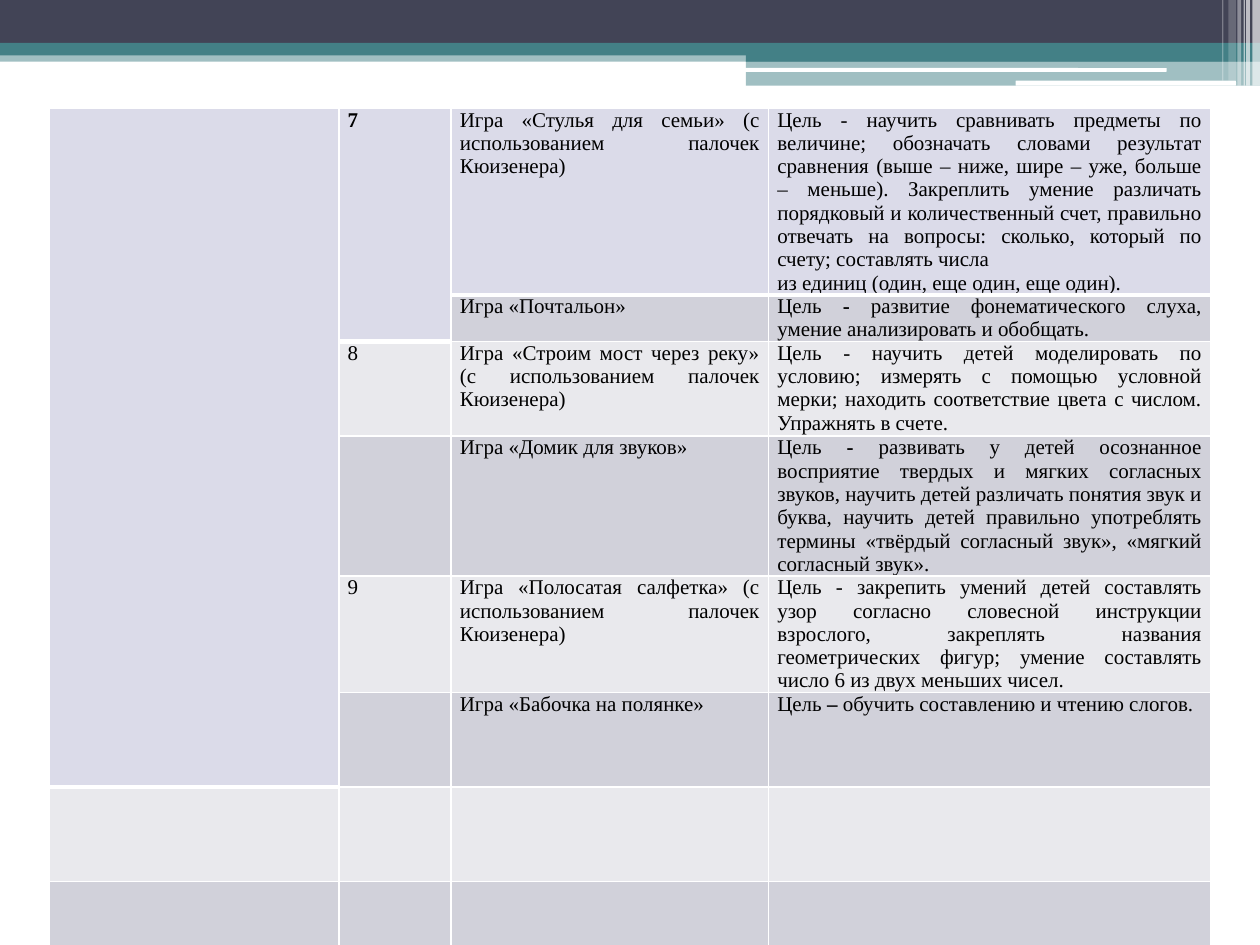
import pptx
import pptx.util
import pptx.dml.color
import pptx.enum.shapes
import pptx.enum.text
import pptx.oxml.ns
import lxml.etree as etree

Inches = pptx.util.Inches
Pt = pptx.util.Pt
qn = pptx.oxml.ns.qn

INK = {"dark": "424456", "teal": "438086", "white": "FFFFFF", "text": "000000",
       "head": "DBDBE9", "light": "E9E9ED", "gray": "D1D1DA"}
FONT = "Times New Roman"

# Header bars: left, top, width, height, colour, opacity in percent
BARS = [
    (0, 0.4, 10, 0.09, "teal", 50),
    (0, 0, 10, 0.34, "dark", 100),
    (0, 0.34, 10, 0.1, "teal", 100),
    (5.92, 0.39, 4.08, 0.1, "teal", 100),
    (5.92, 0.48, 4.08, 0.2, "teal", 50),
]
PILLS = [(5.91, 0.54, 3.35, 0.03), (8.06, 0.64, 1.75, 0.04)]
# Stripes at the right edge: left, width, height, opacity
STRIPES = [
    (9.94, 0.06, 0.68, 65), (9.89, 0.03, 0.68, 65), (9.87, 0.01, 0.68, 60),
    (9.82, 0.03, 0.68, 40), (9.75, 0.06, 0.64, 20), (9.7, 0.01, 0.64, 30),
]

COLS = [2.3, 0.89, 2.52, 3.51]
ROWS = [0.75, 0.03] + [0.75] * 6
# Each row: number, game, goal; a goal is a list of paragraphs,
# and a paragraph is a list of runs that are plain and bold in turn
GAMES = [
    ("7", "Игра «Стулья для семьи» (с использованием палочек Кюизенера)",
     [["Цель - научить сравнивать предметы по величине; обозначать словами "
       "результат сравнения (выше – ниже, шире – уже, больше – меньше). "
       "Закреплить умение различать порядковый и количественный счет, "
       "правильно отвечать на вопросы: сколько, который по счету; "
       "составлять числа"],
      ["из единиц (один, еще один, еще один)."]]),
    ("", "Игра «Почтальон»",
     [["Цель ", "- ",
       "развитие фонематического слуха, умение анализировать и обобщать."]]),
    ("8", "Игра «Строим мост через реку» (с использованием палочек Кюизенера)",
     [["Цель - научить детей моделировать по условию; измерять с помощью "
       "условной мерки; находить соответствие цвета с числом. "
       "Упражнять в счете."]]),
    ("", "Игра «Домик для звуков»",
     [["Цель", " - ",
       "развивать у детей осознанное восприятие твердых и мягких согласных "
       "звуков, научить детей различать понятия звук и буква, научить детей "
       "правильно употреблять термины «твёрдый согласный звук», «мягкий "
       "согласный звук»."]]),
    ("9", "Игра «Полосатая салфетка» (с использованием палочек Кюизенера)",
     [["Цель - закрепить умений детей составлять узор согласно словесной "
       "инструкции взрослого, закреплять названия геометрических фигур; "
       "умение составлять число 6 из двух меньших чисел."]]),
    ("", "Игра «Бабочка на полянке»",
     [["Цель", " – ", "обучить составлению и чтению слогов."]]),
]


def color(name):
    return pptx.dml.color.RGBColor.from_string(INK[name])


def add_bar(slide, box, name, alpha=100, kind="RECTANGLE"):
    kind = getattr(pptx.enum.shapes.MSO_SHAPE, kind)
    bar = slide.shapes.add_shape(kind, *[Inches(v) for v in box])
    bar.shadow.inherit = False
    bar.fill.solid()
    bar.fill.fore_color.rgb = color(name)
    bar.line.fill.background()
    if alpha < 100:
        tint = bar.fill._xPr.find(".//" + qn("a:srgbClr"))
        etree.SubElement(tint, qn("a:alpha"), val=str(alpha * 1000))


def add_header(slide, box):
    left, top = box
    for x, y, wide, high, name, alpha in BARS:
        add_bar(slide, (left + x, top + y, wide, high), name, alpha)
    for x, y, wide, high in PILLS:
        add_bar(slide, (left + x, top + y, wide, high), "white",
                kind="ROUNDED_RECTANGLE")
    for x, wide, high, alpha in STRIPES:
        add_bar(slide, (left + x, top, wide, high), "white", alpha)


def set_edges(cell, edges):
    props = cell._tc.get_or_add_tcPr()
    for spot, (side, width) in enumerate(edges):
        line = etree.Element(qn("a:ln" + side), w=str(Pt(width)))
        fill = etree.SubElement(line, qn("a:solidFill"))
        etree.SubElement(fill, qn("a:srgbClr"), val=INK["white"])
        props.insert(spot, line)


def fill_text(cell, paras):
    frame = cell.text_frame
    for i, runs in enumerate(paras):
        para = frame.add_paragraph() if i else frame.paragraphs[0]
        para.alignment = pptx.enum.text.PP_ALIGN.JUSTIFY
        for j, words in enumerate(runs):
            run = para.add_run()
            run.text = words
            run.font.name = FONT
            run.font.size = Pt(12)
            run.font.bold = j % 2 == 1
            run.font.color.rgb = color("text")


def add_games(slide, box):
    grid = slide.shapes.add_table(
        len(ROWS), len(COLS), *[Inches(v) for v in box]).table
    grid.first_row = grid.horz_banding = False
    for col, wide in zip(grid.columns, COLS):
        col.width = Inches(wide)
    for row, high in zip(grid.rows, ROWS):
        row.height = Inches(high)
    grid.cell(0, 0).merge(grid.cell(5, 0))
    grid.cell(0, 1).merge(grid.cell(1, 1))

    # Fills and edges
    for r in range(len(ROWS)):
        name = "head" if r == 0 else "gray" if r % 2 else "light"
        for c in range(len(COLS)):
            cell = grid.cell(r, c)
            cell.margin_left = cell.margin_right = Inches(0.07)
            cell.margin_top = cell.margin_bottom = 0
            if cell.is_spanned:
                continue
            cell.fill.solid()
            cell.fill.fore_color.rgb = color(name)
            edges = [("L", 1), ("R", 1), ("B", 1 if r else 3)]
            if r == 0:
                edges.insert(2, ("T", 1))
            set_edges(cell, edges)

    # Wording
    for r, (mark, game, goal) in enumerate(GAMES):
        if mark:
            fill_text(grid.cell(r, 1), [[mark]])
        fill_text(grid.cell(r, 2), [[game]])
        fill_text(grid.cell(r, 3), goal)
    grid.cell(0, 1).text_frame.paragraphs[0].runs[0].font.bold = True


def main():
    deck = pptx.Presentation()
    deck.slide_width, deck.slide_height = Inches(10), Inches(7.5)
    slide = deck.slides.add_slide(deck.slide_layouts[6])
    add_header(slide, (0, 0))
    add_games(slide, (0.39, 0.86, 9.22, 7.26))
    deck.save("out.pptx")


if __name__ == "__main__":
    main()
